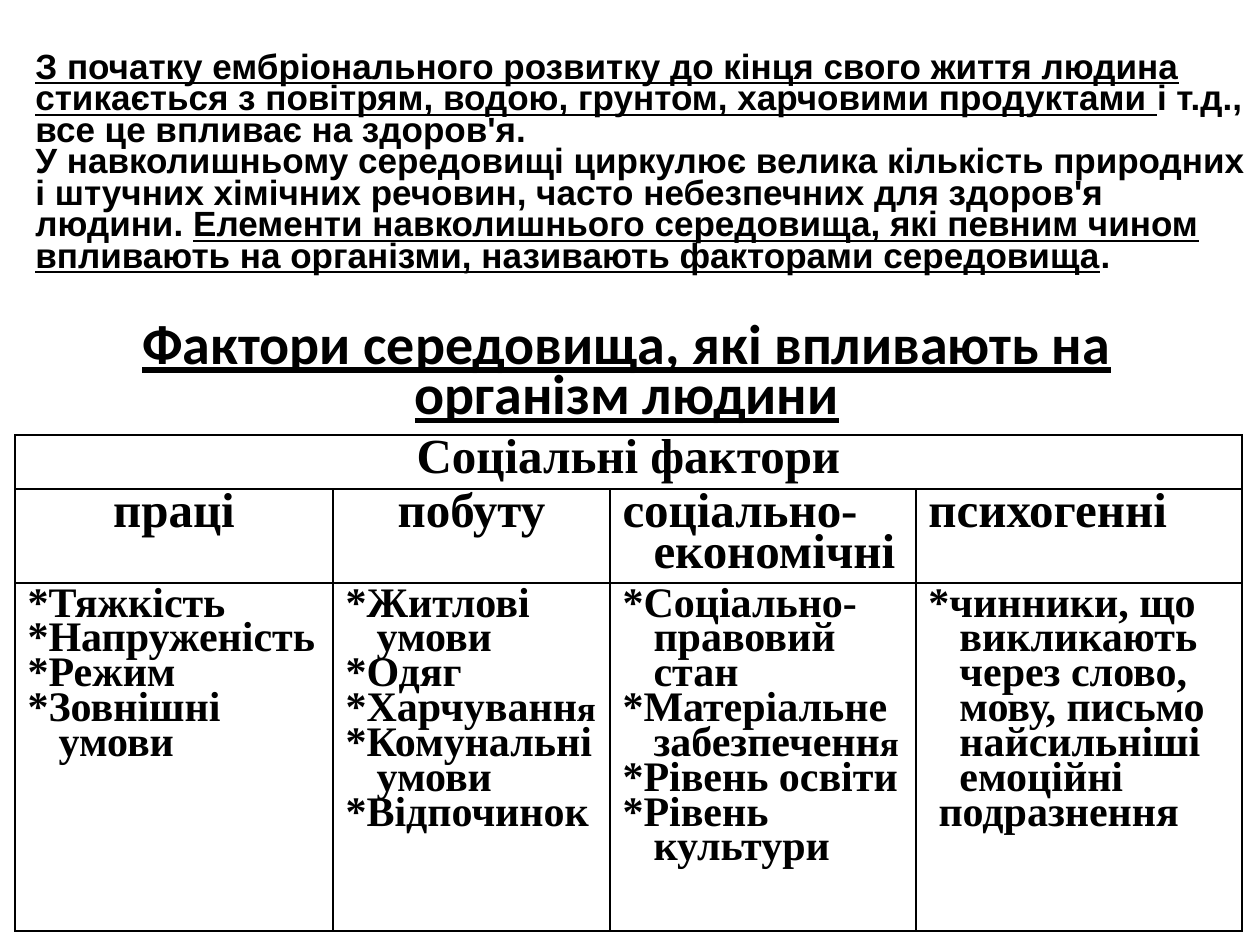
"""Builds a slide on the social environmental factors that affect human health."""
import pptx
import pptx.dml.color
import pptx.enum.text
import pptx.oxml.ns
import pptx.util
from lxml import etree

PX = 914400 // 126
BLACK = "000000"
LEFT = pptx.enum.text.PP_ALIGN.LEFT
CENTER = pptx.enum.text.PP_ALIGN.CENTER
MIDDLE = pptx.enum.text.MSO_ANCHOR.MIDDLE
NO_FIT = pptx.enum.text.MSO_AUTO_SIZE.NONE

TITLE = "Фактори середовища, які впливають на організм людини"
TITLE_AREA = (23, 326, 1208, 97)

INTRO_AREA = (23, 48, 1237, 233)
INTRO = [
    [("З початку ембріонального розвитку до кінця свого життя людина стикається "
      "з повітрям, водою, грунтом, харчовими продуктами ", True),
     ("і т.д., все це впливає на здоров'я.", False)],
    [("У навколишньому середовищі циркулює велика кількість природних і штучних "
      "хімічних речовин, часто небезпечних для здоров'я людини. ", False),
     ("Елементи навколишнього середовища, які певним чином впливають на організми, "
      "називають факторами середовища", True),
     (".", False)],
]

TABLE_ORIGIN = (15, 435)
COLUMN_WIDTHS = (318, 277, 306, 326)
ROW_HEIGHTS = (54, 94, 348)
HANGING = 31
LAST_LINE_INDENT = -21
HEADING = "Соціальні фактори"
LAST_LINE = "подразнення"
FACTORS = [
    ("праці", CENTER,
     [["*Тяжкість"], ["*Напруженість"], ["*Режим"], ["*Зовнішні умови"]]),
    ("побуту", CENTER,
     [["*Житлові умови"], ["*Одяг"], ["*Харчуванн", "я"],
      ["*Комунальні умови"], ["*Відпочинок"]]),
    ("соціально-економічні", LEFT,
     [["*Соціально-правовий стан"], ["*Матеріальне забезпеченн", "я"],
      ["*Рівень освіти"], ["*Рівень культури"]]),
    ("психогенні", LEFT,
     [["*чинники, що викликають через слово, мову, письмо найсильніші емоційні"],
      [LAST_LINE]]),
]


def color(value):
    return pptx.dml.color.RGBColor.from_string(value)


def scaled(lengths):
    return [length * PX for length in lengths]


def add_span(para, text, font_name, size, underline=False):
    span = para.add_run()
    span.text = text
    span.font.name = font_name
    span.font.size = pptx.util.Pt(size)
    span.font.bold = True
    span.font.underline = underline
    span.font.color.rgb = color(BLACK)


def start_para(frame, index, align):
    para = frame.add_paragraph() if index else frame.paragraphs[0]
    para.alignment = align
    para.line_spacing = 0.75
    para.space_before = para.space_after = pptx.util.Pt(0)
    return para


def add_borders(cell):
    properties = cell._tc.get_or_add_tcPr()
    for side in ("lnL", "lnR", "lnT", "lnB"):
        line = etree.SubElement(properties, pptx.oxml.ns.qn("a:" + side), w="12700")
        fill = etree.SubElement(line, pptx.oxml.ns.qn("a:solidFill"))
        etree.SubElement(fill, pptx.oxml.ns.qn("a:srgbClr"), val=BLACK)


def fill_cell(cell, paragraphs, align, size):
    for index, parts in enumerate(paragraphs):
        para = start_para(cell.text_frame, index, align)
        indent = LAST_LINE_INDENT if parts == [LAST_LINE] else -HANGING
        properties = para._p.get_or_add_pPr()
        properties.set("marL", str(HANGING * PX))
        properties.set("indent", str(indent * PX))
        for position, text in enumerate(parts):
            add_span(para, text, "Times New Roman", 20 if position else size)


def add_title(slide):
    title = slide.shapes.title
    title.left, title.top, title.width, title.height = scaled(TITLE_AREA)
    frame = title.text_frame
    frame.auto_size = NO_FIT
    frame.vertical_anchor = MIDDLE
    add_span(start_para(frame, 0, CENTER), TITLE, "Calibri", 32, True)


def add_intro(slide):
    frame = slide.shapes.add_textbox(*scaled(INTRO_AREA)).text_frame
    frame.word_wrap = True
    frame.vertical_anchor = MIDDLE
    for index, parts in enumerate(INTRO):
        para = start_para(frame, index, LEFT)
        for text, underline in parts:
            add_span(para, text, "Arial", 20, underline)


def add_factor_table(slide):
    size = (sum(COLUMN_WIDTHS), sum(ROW_HEIGHTS))
    table = slide.shapes.add_table(
        len(ROW_HEIGHTS), len(FACTORS), *scaled(TABLE_ORIGIN + size)).table
    table.first_row = table.horz_banding = False
    for column, width in zip(table.columns, scaled(COLUMN_WIDTHS)):
        column.width = width
    for row, height in zip(table.rows, scaled(ROW_HEIGHTS)):
        row.height = height
    for cell in table.iter_cells():
        add_borders(cell)
        cell.fill.background()
    table.cell(0, 0).merge(table.cell(0, len(FACTORS) - 1))
    fill_cell(table.cell(0, 0), [[HEADING]], CENTER, 28)
    for index, (name, align, items) in enumerate(FACTORS):
        fill_cell(table.cell(1, index), [[name]], align, 28)
        fill_cell(table.cell(2, index), items, LEFT, 24)


def main():
    deck = pptx.Presentation()
    deck.slide_width = pptx.util.Inches(10)
    deck.slide_height = pptx.util.Inches(7.5)
    slide = deck.slides.add_slide(deck.slide_layouts.get_by_name("Title Only"))
    add_title(slide)
    add_factor_table(slide)
    add_intro(slide)
    deck.save("out.pptx")


if __name__ == "__main__":
    main()
